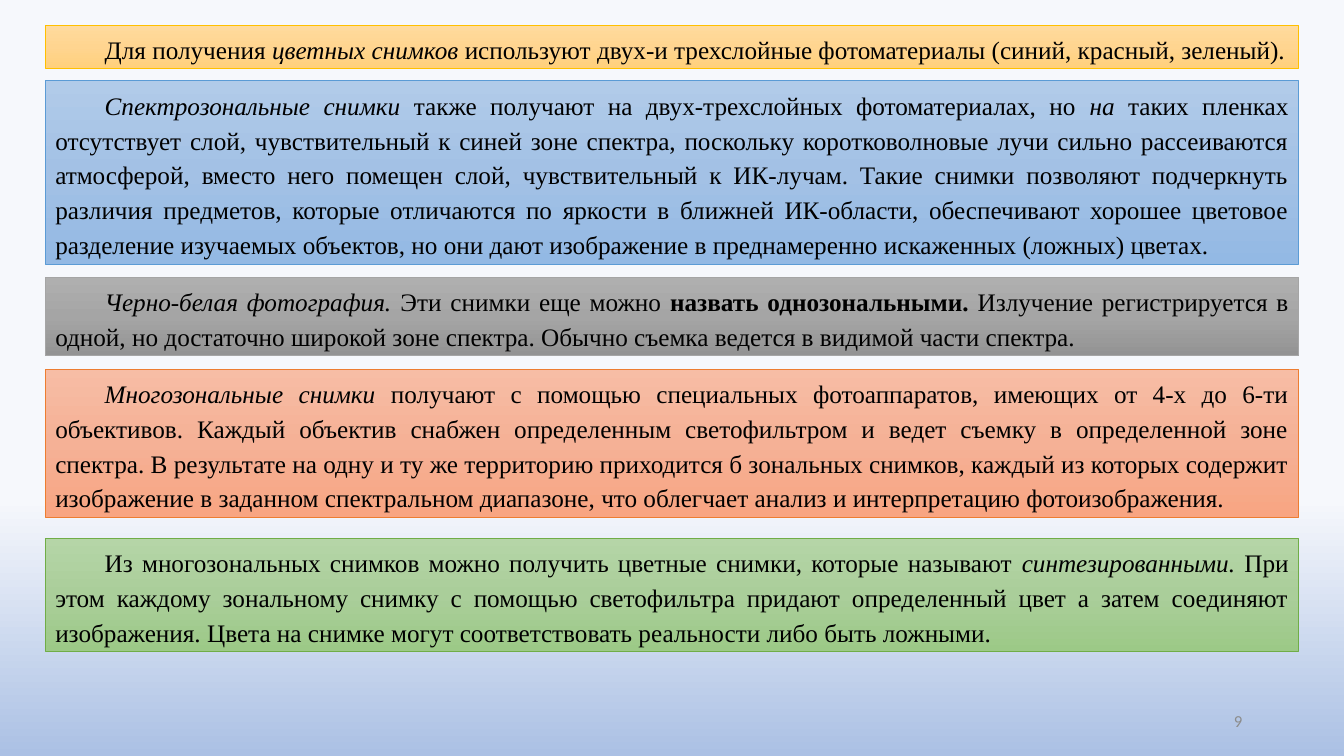
from lxml import etree
from pptx import Presentation
from pptx.dml.color import RGBColor
from pptx.enum.text import MSO_ANCHOR, MSO_AUTO_SIZE, PP_ALIGN
from pptx.oxml.ns import qn
from pptx.util import Inches, Pt

JUSTIFY, RIGHT = PP_ALIGN.JUSTIFY, PP_ALIGN.RIGHT
TOP, MIDDLE = MSO_ANCHOR.TOP, MSO_ANCHOR.MIDDLE
GROW = MSO_AUTO_SIZE.SHAPE_TO_FIT_TEXT
PLAIN, ITALIC, BOLD = {}, {"italic": True}, {"bold": True}

# Content: panel name, top, height, runs
PANELS = [
    ("colour", 0.25, 0.43, [
        ("Для получения ", PLAIN),
        ("цветных снимков ", ITALIC),
        ("используют двух-и трехслойные фотоматериалы (синий, красный, зеленый).", PLAIN),
    ]),
    ("spectrozonal", 0.8, 1.82, [
        ("Спектрозональные снимки ", ITALIC),
        ("также получают на двух-трехслойных фотоматериалах, но ", PLAIN),
        ("на ", ITALIC),
        ("таких пленках отсутствует слой, чувствительный к синей зоне спектра, "
         "поскольку коротковолновые лучи сильно рассеиваются атмосферой, вместо него "
         "помещен слой, чувствительный к ИК-лучам. Такие снимки позволяют подчеркнуть "
         "различия предметов, которые отличаются по яркости в ближней ИК-области, "
         "обеспечивают хорошее цветовое разделение изучаемых объектов, но они дают "
         "изображение в преднамеренно искаженных (ложных) цветах.", PLAIN),
    ]),
    ("monochrome", 2.75, 0.78, [
        ("Черно-белая фотография. ", ITALIC),
        ("Эти снимки еще можно ", PLAIN),
        ("назвать однозональными. ", BOLD),
        ("Излучение регистрируется в одной, но достаточно широкой зоне спектра. "
         "Обычно съемка ведется в видимой части спектра.", PLAIN),
    ]),
    ("multizonal", 3.66, 1.47, [
        ("Многозональные снимки ", ITALIC),
        ("получают с помощью специальных фотоаппаратов, имеющих от 4-х до 6-ти "
         "объективов. Каждый объектив снабжен определенным светофильтром и ведет съемку "
         "в определенной зоне спектра. В результате на одну и ту же территорию приходится "
         "б зональных снимков, каждый из которых содержит изображение в заданном "
         "спектральном диапазоне, что облегчает анализ и интерпретацию фотоизображения.", PLAIN),
    ]),
    ("synthesized", 5.34, 1.12, [
        ("Из многозональных снимков можно получить цветные снимки, которые называют ", PLAIN),
        ("синтезированными. ", ITALIC),
        ("При этом каждому зональному снимку с помощью светофильтра придают определенный "
         "цвет а затем соединяют изображения. Цвета на снимке могут соответствовать "
         "реальности либо быть ложными.", PLAIN),
    ]),
]
SLIDE_NUMBER = "9"

THEME = {
    "background": [(66, "F6F8FC"), (100, "ABC0E4")],
    "body": {"name": "Times New Roman", "size": Pt(18), "color": "000000"},
    "number": {"name": "Calibri", "size": Pt(12), "color": "8C8C8C"},
    "line_width": Pt(0.5),
    # Outline, then gradient from top to bottom
    "panels": {
        "colour": ("FFC000", ["FFDB9E", "FFD590", "FFD07C"]),
        "spectrozonal": ("5B9BD5", ["B1CBE9", "A3C1E5", "93B9E4"]),
        "monochrome": ("A5A5A5", ["AFAFAF", "A5A5A5", "939393"]),
        "multizonal": ("ED7D31", ["F7BDA5", "F5B196", "F8A582"]),
        "synthesized": ("70AD47", ["B5D5A7", "AACE9A", "9CC987"]),
    },
}
BODY_FORMAT = {"alignment": JUSTIFY, "line_spacing": 1.15, "space_after": Pt(10)}
NUMBER_FORMAT = {"alignment": RIGHT}

SLIDE_WIDTH, SLIDE_HEIGHT = 13.33, 7.5
MARGIN = 0.45
PANEL_WIDTH = SLIDE_WIDTH - 2 * MARGIN
FIRST_LINE_INDENT = 0.49


def set_gradient(fill, element, stops):
    """Fill downwards through any number of (percent, colour) stops."""
    fill.gradient()
    fill.gradient_angle = 270
    stop_list = element.find(".//" + qn("a:gsLst"))
    for old_stop in list(stop_list):
        stop_list.remove(old_stop)
    for percent, colour in stops:
        stop = etree.SubElement(stop_list, qn("a:gs"), pos=str(percent * 1000))
        etree.SubElement(stop, qn("a:srgbClr"), val=colour)


def add_text(slide, box, runs, font, paragraph_format, anchor):
    shape = slide.shapes.add_textbox(*map(Inches, box))
    frame = shape.text_frame
    frame.word_wrap = True
    frame.vertical_anchor = anchor
    paragraph = frame.paragraphs[0]
    for name, value in paragraph_format.items():
        setattr(paragraph, name, value)
    for text, style in runs:
        run = paragraph.add_run()
        run.text = text
        run.font.color.rgb = RGBColor.from_string(font["color"])
        for name, value in ({"name": font["name"], "size": font["size"]} | style).items():
            setattr(run.font, name, value)
    return shape


def add_panel(slide, name, top, height, runs):
    outline, colours = THEME["panels"][name]
    panel = add_text(slide, (MARGIN, top, PANEL_WIDTH, height), runs,
                     THEME["body"], BODY_FORMAT, TOP)
    panel.text_frame.auto_size = GROW
    properties = panel.text_frame.paragraphs[0]._p.get_or_add_pPr()
    properties.set("indent", str(Inches(FIRST_LINE_INDENT)))
    set_gradient(panel.fill, panel._element.spPr, zip((0, 50, 100), colours))
    panel.line.color.rgb = RGBColor.from_string(outline)
    panel.line.width = THEME["line_width"]


def main():
    presentation = Presentation()
    presentation.slide_width = Inches(SLIDE_WIDTH)
    presentation.slide_height = Inches(SLIDE_HEIGHT)
    slide = presentation.slides.add_slide(presentation.slide_layouts[6])

    # Background
    set_gradient(slide.background.fill, slide._element, THEME["background"])

    # Slide number
    add_text(slide, (9.42, 6.95, 3, 0.4), [(SLIDE_NUMBER, PLAIN)],
             THEME["number"], NUMBER_FORMAT, MIDDLE)

    # Text panels
    for panel in PANELS:
        add_panel(slide, *panel)

    presentation.save("out.pptx")


if __name__ == "__main__":
    main()
